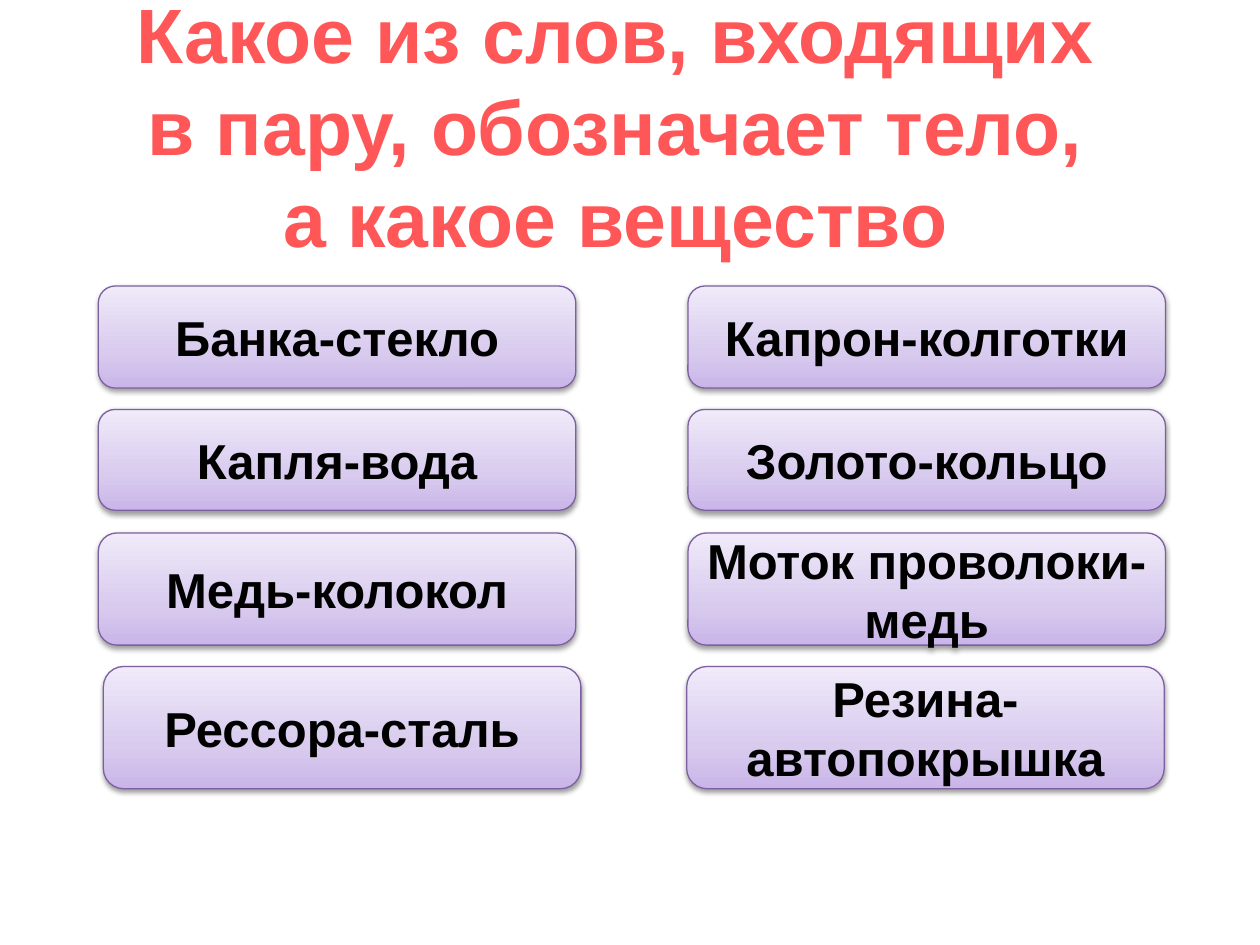
from copy import deepcopy

from lxml import etree
from pptx import Presentation
from pptx.dml.color import RGBColor
from pptx.enum.shapes import MSO_SHAPE
from pptx.enum.text import MSO_ANCHOR, PP_ALIGN
from pptx.oxml import parse_xml
from pptx.oxml.ns import qn
from pptx.util import Inches, Pt

TITLE = "Какое из слов, входящих в пару, обозначает тело, а какое вещество"
ROUNDED = MSO_SHAPE.ROUNDED_RECTANGLE
PROCESS = MSO_SHAPE.FLOWCHART_ALTERNATE_PROCESS
MIDDLE = MSO_ANCHOR.MIDDLE
CENTER = PP_ALIGN.CENTER

COLUMNS = (0.78, 5.46)
CARD_WIDTH = 3.79
ROWS = [
    (2.27, 0.81, (0, 0), [("Банка-стекло", ROUNDED), ("Капрон-колготки", ROUNDED)]),
    (3.25, 0.8, (0, 0), [("Капля-вода", ROUNDED), ("Золото-кольцо", ROUNDED)]),
    (4.23, 0.89, (0, 0), [("Медь-колокол", ROUNDED), ("Моток проволоки-медь", PROCESS)]),
    (5.29, 0.97, (0.04, -0.01), [("Рессора-сталь", ROUNDED), ("Резина-автопокрышка", ROUNDED)]),
]

CORAL = RGBColor(0xFF, 0x57, 0x57)
BLACK = RGBColor(0, 0, 0)
PURPLE = RGBColor(0x7D, 0x60, 0xA0)
GRADIENT = [
    (0, RGBColor(0xC9, 0xB5, 0xE8)),
    (0.35, RGBColor(0xD8, 0xCB, 0xEE)),
    (1, RGBColor(0xF0, 0xEA, 0xF9)),
]
SHADOW = (
    '<a:outerShdw xmlns:a="http://schemas.openxmlformats.org/drawingml/2006/main"'
    ' blurRad="40000" dist="20000" dir="5400000" rotWithShape="0">'
    '<a:srgbClr val="000000"><a:alpha val="38000"/></a:srgbClr></a:outerShdw>'
)


def write_text(shape, text, size, color):
    frame = shape.text_frame
    frame.word_wrap = True
    frame.vertical_anchor = MIDDLE
    paragraph = frame.paragraphs[0]
    paragraph.text = text
    paragraph.alignment = CENTER
    font = paragraph.font
    font.name = "Arial"
    font.size = Pt(size)
    font.bold = True
    font.color.rgb = color


def paint_gradient(shape):
    shape.fill.gradient()
    shape.fill.gradient_angle = 90
    stop_list = shape._element.spPr.find(qn("a:gradFill")).find(qn("a:gsLst"))
    stop_list.insert(1, deepcopy(stop_list[0]))
    for stop, (position, color) in zip(shape.fill.gradient_stops, GRADIENT):
        stop.position = position
        stop.color.rgb = color


def add_shadow(shape):
    shape.shadow.inherit = False
    shape._element.spPr.find(qn("a:effectLst")).append(parse_xml(SHADOW))


def add_card(slide, kind, text, left, top, height):
    card = slide.shapes.add_shape(
        kind, Inches(left), Inches(top), Inches(CARD_WIDTH), Inches(height)
    )
    paint_gradient(card)
    card.line.color.rgb = PURPLE
    card.line.width = Pt(0.75)
    add_shadow(card)
    write_text(card, text, 28, BLACK)


def main():
    presentation = Presentation()
    presentation.slide_width = Inches(10)
    presentation.slide_height = Inches(7.5)
    slide = presentation.slides.add_slide(presentation.slide_layouts[6])
    title = slide.shapes.add_textbox(Inches(0.94), Inches(0.36), Inches(7.89), Inches(1.26))
    write_text(title, TITLE, 44, CORAL)
    for top, height, shifts, cards in ROWS:
        for left, shift, (text, kind) in zip(COLUMNS, shifts, cards):
            add_card(slide, kind, text, left + shift, top, height)
    presentation.save("out.pptx")


if __name__ == "__main__":
    main()
